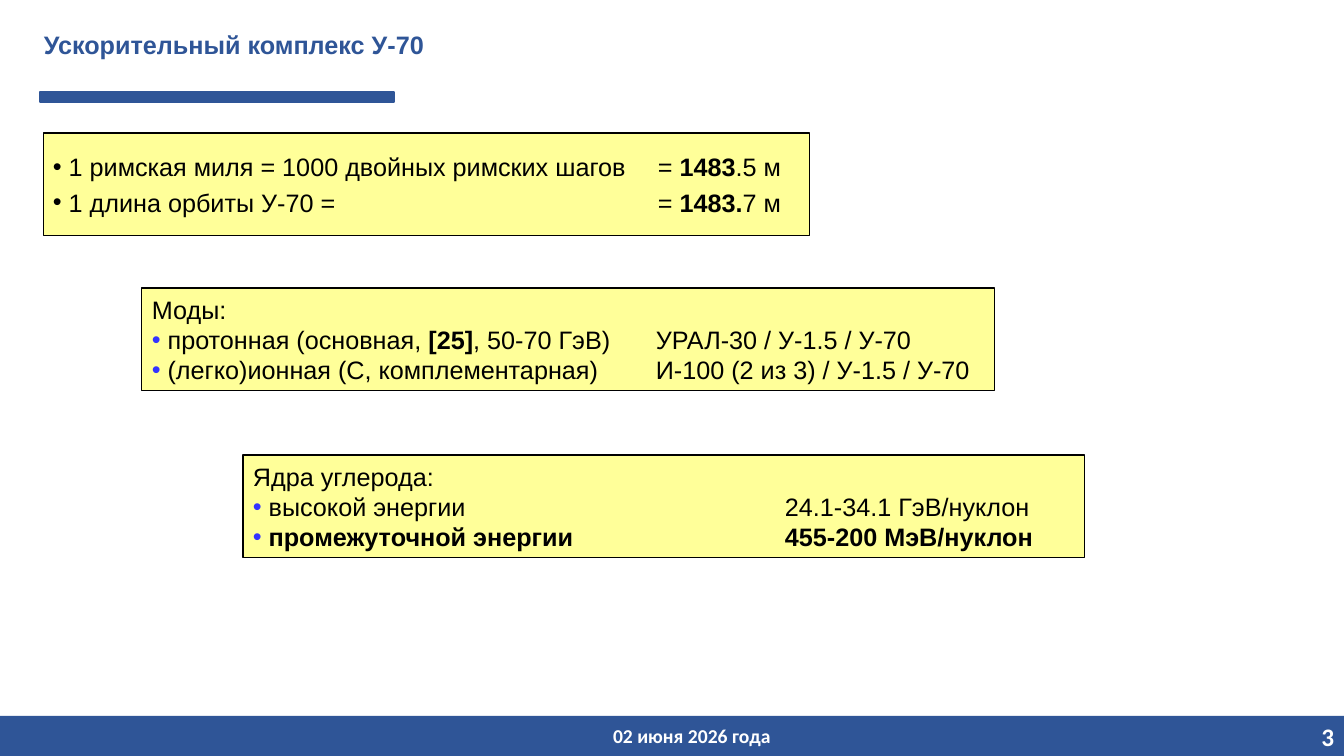
import pptx
import pptx.util
import pptx.dml.color
import pptx.enum.shapes
import pptx.enum.text
import pptx.oxml
import pptx.oxml.ns
import lxml.etree

BLUE, WHITE, BLACK, YELLOW = "2F5597", "FFFFFF", "000000", "FFFF00"
BULLET_BLUE = "3333FF"
BOX_HEIGHT = 103

# Each paragraph is a list of (text, bold) runs; "bulleted" is the index of the first bulleted one.
NOTES = [
    {"left": 43, "top": 133, "width": 767, "tab": 605, "bulleted": 0,
     "bullet_color": BLACK, "space_before": 3.6,
     "paragraphs": [
         [(" 1 римская миля = 1000 двойных римских шагов\t= ", False), ("1483", True), (".5 м", False)],
         [(" 1 длина орбиты У-70 =\t= ", False), ("1483.", True), ("7 м", False)],
     ]},
    {"left": 142, "top": 288, "width": 853, "tab": 504, "bulleted": 1,
     "bullet_color": BULLET_BLUE, "space_before": 0,
     "paragraphs": [
         [("Моды:", False)],
         [(" протонная (основная, ", False), ("[25]", True),
          (", 50-70 ГэВ)\tУРАЛ-30 / У-1.5 / У-70", False)],
         [(" (легко)ионная (C, комплементарная)\tИ-100 (2 из 3) / У-1.5 / У-70", False)],
     ]},
    {"left": 243, "top": 455, "width": 842, "tab": 532, "bulleted": 1,
     "bullet_color": BULLET_BLUE, "space_before": 0,
     "paragraphs": [
         [("Ядра углерода:", False)],
         [(" высокой энергии\t24.1-34.1 ГэВ/нуклон", False)],
         [(" ", False), ("промежуточной энергии\t455-200 МэВ/нуклон", True)],
     ]},
]


def px(length):
    return pptx.util.Emu(round(length * 914400 / 100.8))


def rgb(color):
    return pptx.dml.color.RGBColor.from_string(color)


def add_rectangle(slide, left, top, width, height, fill, line=None, line_width=1):
    shape = slide.shapes.add_shape(pptx.enum.shapes.MSO_SHAPE.RECTANGLE,
                                   px(left), px(top), px(width), px(height))
    shape.shadow.inherit = False
    shape.fill.solid()
    shape.fill.fore_color.rgb = rgb(fill)
    if line:
        shape.line.color.rgb = rgb(line)
        shape.line.width = pptx.util.Pt(line_width)
    else:
        shape.line.fill.background()
    return shape


def set_opacity(shape, percent):
    color = shape._element.spPr.find(".//" + pptx.oxml.ns.qn("a:srgbClr"))
    lxml.etree.SubElement(color, pptx.oxml.ns.qn("a:alpha"), val=str(percent * 1000))


def add_bullet_and_tab(paragraph, bullet_color, tab):
    properties = paragraph._p.get_or_add_pPr()
    qn = pptx.oxml.ns.qn
    color = lxml.etree.SubElement(properties, qn("a:buClr"))
    lxml.etree.SubElement(color, qn("a:srgbClr"), val=bullet_color)
    lxml.etree.SubElement(properties, qn("a:buFont"), typeface="Arial")
    lxml.etree.SubElement(properties, qn("a:buChar"), char="•")
    tabs = lxml.etree.SubElement(properties, qn("a:tabLst"))
    lxml.etree.SubElement(tabs, qn("a:tab"), pos=str(px(tab)), algn="l")


def add_run(paragraph, text, size=18, font="Arial", color=BLACK, bold=False):
    run = paragraph.add_run()
    run.text = text
    run.font.size = pptx.util.Pt(size)
    run.font.name = font
    run.font.color.rgb = rgb(color)
    run.font.bold = bold


def prepare_frame(shape):
    frame = shape.text_frame
    frame.word_wrap = True
    frame.vertical_anchor = pptx.enum.text.MSO_ANCHOR.MIDDLE
    return frame


def add_label(slide, left, top, width, height, text, align="LEFT", **run_format):
    box = slide.shapes.add_textbox(px(left), px(top), px(width), px(height))
    paragraph = prepare_frame(box).paragraphs[0]
    paragraph.alignment = pptx.enum.text.PP_ALIGN[align]
    add_run(paragraph, text, **run_format)


def add_note(slide, note):
    shape = add_rectangle(slide, note["left"], note["top"], note["width"], BOX_HEIGHT,
                          YELLOW, line=BLACK, line_width=0.75)
    set_opacity(shape, 40)
    frame = prepare_frame(shape)
    for index, runs in enumerate(note["paragraphs"]):
        paragraph = frame.add_paragraph() if index else frame.paragraphs[0]
        paragraph.alignment = pptx.enum.text.PP_ALIGN.LEFT
        if index and note["space_before"]:
            paragraph.space_before = pptx.util.Pt(note["space_before"])
        if index >= note["bulleted"]:
            add_bullet_and_tab(paragraph, note["bullet_color"], note["tab"])
        for text, bold in runs:
            add_run(paragraph, text, bold=bold)


def main():
    presentation = pptx.Presentation()
    presentation.slide_width, presentation.slide_height = px(1344), px(756)
    slide = presentation.slides.add_slide(presentation.slide_layouts[6])

    add_rectangle(slide, 0, 716, 1344, 40, BLUE)
    add_rectangle(slide, 40, 92, 354, 10, BLUE, line=BLUE)
    add_label(slide, 34, 0, 935, 89, "Ускорительный комплекс У-70", color=BLUE, bold=True)
    for note in NOTES:
        add_note(slide, note)
    footer = {"font": "Calibri", "color": WHITE, "bold": True}
    add_label(slide, 127, 716, 1130, 40, "02 июня 2026 года", align="CENTER", size=14, **footer)
    add_label(slide, 1257, 716, 87, 40, "3", align="RIGHT", size=18, **footer)

    presentation.save("out.pptx")


if __name__ == "__main__":
    main()
